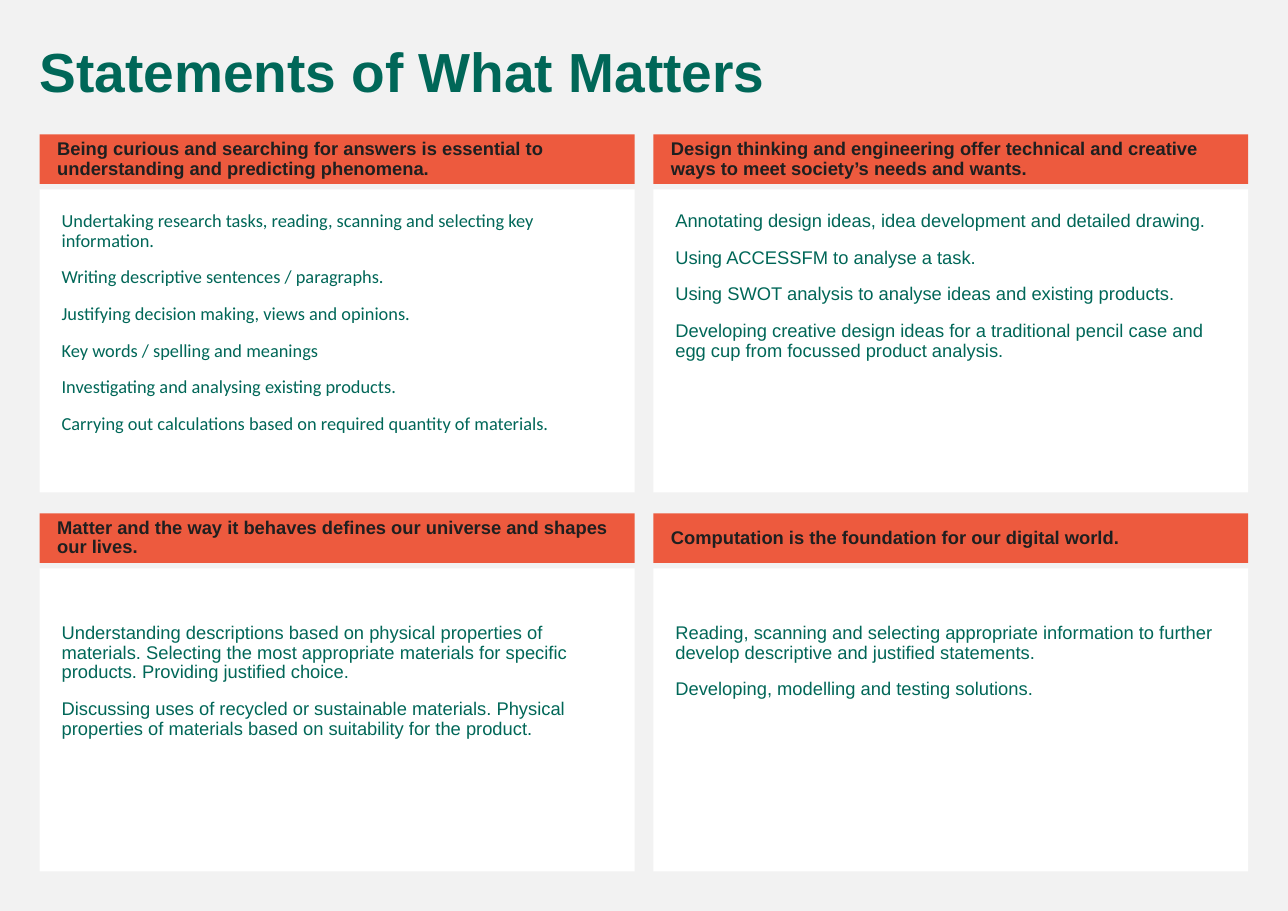
"""Build the Statements of What Matters slide: a title above a two-by-two grid of cards."""
from pptx import Presentation
from pptx.dml.color import RGBColor
from pptx.enum.shapes import MSO_SHAPE
from pptx.enum.text import MSO_ANCHOR, PP_ALIGN
from pptx.util import Inches, Pt

TITLE = "Statements of What Matters"
CARDS = [
    {
        "heading": "Being curious and searching for answers is essential to "
                   "understanding and predicting phenomena.",
        "points": [
            "Undertaking research tasks, reading, scanning and selecting key information.",
            "Writing descriptive sentences / paragraphs.",
            "Justifying decision making, views and opinions.",
            "Key words / spelling and meanings",
            "Investigating and analysing existing products.",
            "Carrying out calculations based on required quantity of materials.",
        ],
        "font": "Calibri",
    },
    {
        "heading": "Design thinking and engineering offer technical and creative "
                   "ways to meet society’s needs and wants.",
        "points": [
            "Annotating design ideas, idea development and detailed drawing.",
            "Using ACCESSFM to analyse a task.",
            "Using SWOT analysis to analyse ideas and existing products.",
            "Developing creative design ideas for a traditional pencil case and "
            "egg cup from focussed product analysis.",
        ],
    },
    {
        "heading": "Matter and the way it behaves defines our universe and shapes our lives.",
        "points": [
            "Understanding descriptions based on physical properties of materials. "
            "Selecting the most appropriate materials for specific products. "
            "Providing justified choice.",
            "Discussing uses of recycled or sustainable materials. Physical properties "
            "of materials based on suitability for the product.",
        ],
        "top_inset": 0.5,
    },
    {
        "heading": "Computation is the foundation for our digital world.",
        "points": [
            "Reading, scanning and selecting appropriate information to further "
            "develop descriptive and justified statements.",
            "Developing, modelling and testing solutions.",
        ],
        "top_inset": 0.5,
    },
]

THEME = {
    "background": RGBColor.from_string("F2F2F2"),
    "panel": RGBColor.from_string("FFFFFF"),
    "banner": RGBColor.from_string("ED5A3E"),
    "green": RGBColor.from_string("006758"),
    "dark": RGBColor.from_string("1F1F1F"),
    "font": "Arial",
    "title_size": 36,
    "text_size": 12,
}

GRID_LEFT, GRID_TOP = 0.36, 1.22
COLUMN_STEP, ROW_STEP = 5.57, 3.44
CARD_WIDTH, BANNER_HEIGHT, PANEL_HEIGHT = 5.4, 0.45, 2.75
PANEL_OFFSET = 0.5


def write_text(shape, lines, color, size=THEME["text_size"], font=THEME["font"],
               bold=False, anchor=MSO_ANCHOR.TOP, insets=(0.1, 0.05, 0.1, 0.05)):
    """Fill a shape with paragraphs in one format."""
    frame = shape.text_frame
    frame.word_wrap = True
    frame.vertical_anchor = anchor
    frame.margin_left, frame.margin_top, frame.margin_right, frame.margin_bottom = map(Inches, insets)
    frame.text = "\n".join(lines)
    for paragraph in frame.paragraphs:
        paragraph.alignment = PP_ALIGN.LEFT
        paragraph.line_spacing = 0.9
        paragraph.space_before = Pt(11)
        for run in paragraph.runs:
            run.font.name, run.font.size, run.font.bold = font, Pt(size), bold
            run.font.color.rgb = color


def add_block(slide, left, top, height, fill):
    """Add a flat rectangle as wide as a card."""
    shape = slide.shapes.add_shape(MSO_SHAPE.RECTANGLE, *map(Inches, (left, top, CARD_WIDTH, height)))
    shape.shadow.inherit = False
    shape.fill.solid()
    shape.fill.fore_color.rgb = fill
    shape.line.fill.background()
    return shape


def add_card(slide, index, card):
    """Place a banner and its panel in the grid."""
    row, column = divmod(index, 2)
    left, top = GRID_LEFT + column * COLUMN_STEP, GRID_TOP + row * ROW_STEP
    panel = add_block(slide, left, top + PANEL_OFFSET, PANEL_HEIGHT, THEME["panel"])
    write_text(panel, card["points"], THEME["green"], font=card.get("font", THEME["font"]),
               insets=(0.2, card.get("top_inset", 0.2), 0.2, 0.2))
    banner = add_block(slide, left, top, BANNER_HEIGHT, THEME["banner"])
    write_text(banner, [card["heading"]], THEME["dark"], bold=True,
               anchor=MSO_ANCHOR.MIDDLE, insets=(0.16, 0.05, 0.1, 0.05))


def main():
    """Build and save the presentation."""
    presentation = Presentation()
    presentation.slide_width, presentation.slide_height = Inches(11.69), Inches(8.27)
    slide = presentation.slides.add_slide(presentation.slide_layouts[6])
    slide.background.fill.solid()
    slide.background.fill.fore_color.rgb = THEME["background"]
    for index, card in enumerate(CARDS):
        add_card(slide, index, card)
    title = slide.shapes.add_textbox(*map(Inches, (0.26, 0.36, 11.08, 0.65)))
    write_text(title, [TITLE], THEME["green"], size=THEME["title_size"], bold=True)
    presentation.save("out.pptx")


if __name__ == "__main__":
    main()
